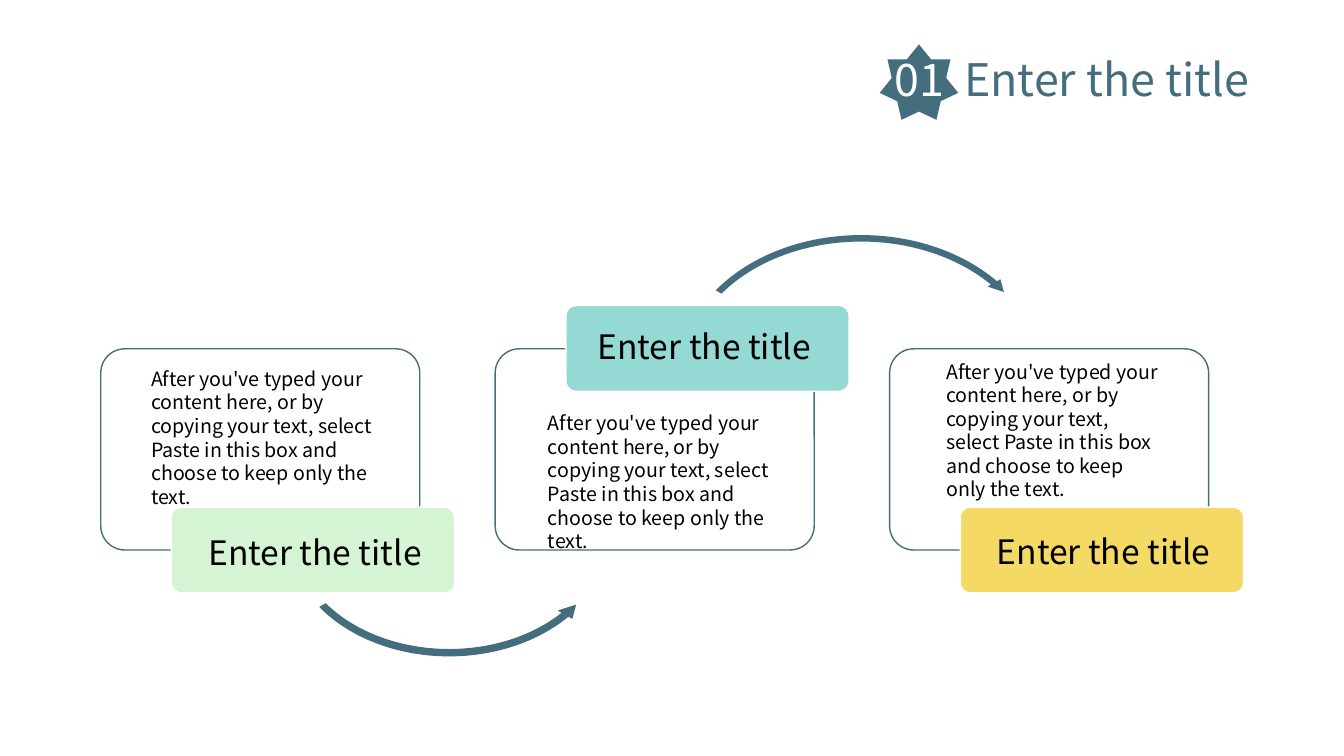
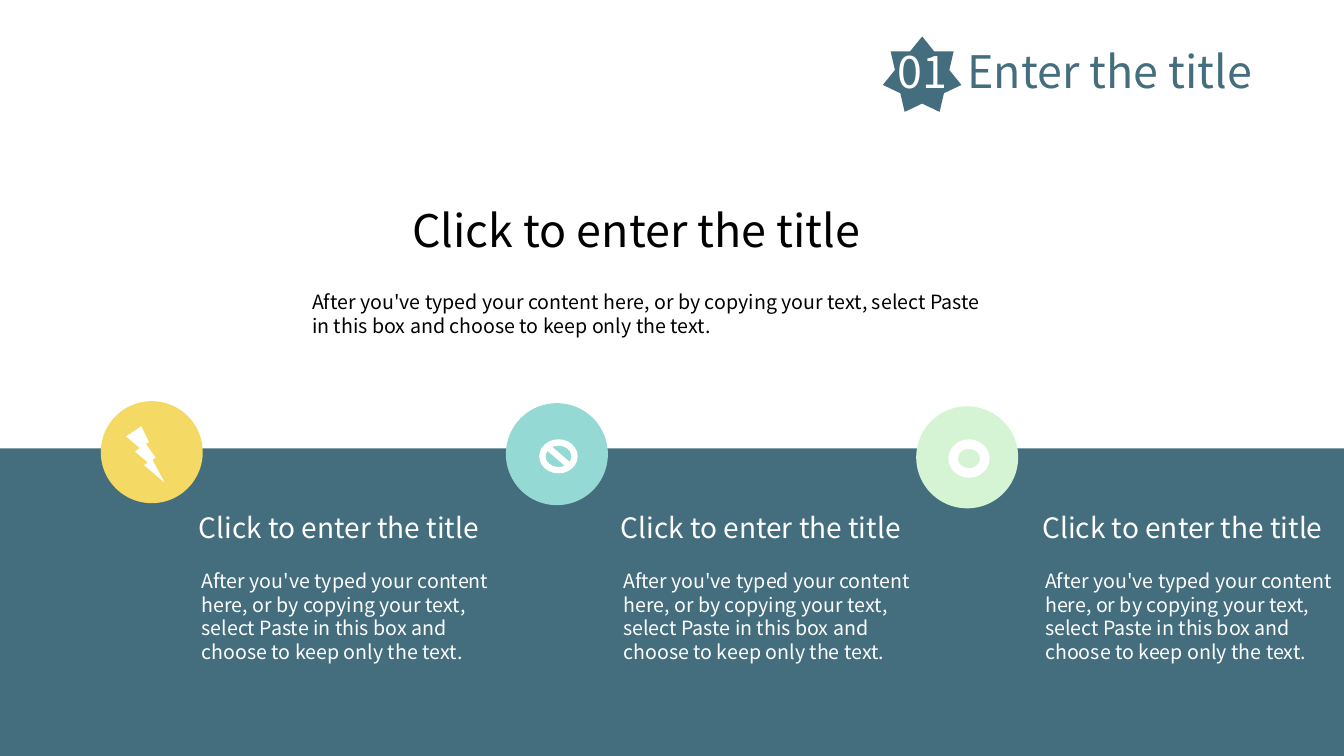
"""Build two slides: three linked cards and three columns on a band."""
from dataclasses import dataclass
from typing import Any, Optional

from lxml import etree
from pptx import Presentation
from pptx import util as u
from pptx.dml import color
from pptx.enum import shapes, text
from pptx.oxml import ns

Preset = shapes.MSO_SHAPE
BODY = ("After you've typed your content here, or by copying your text, "
        "select Paste in this box and choose to keep only the text.")
TITLE = "Enter the title"
CLICK_TITLE = "Click to enter the title"


@dataclass(frozen=True)
class Theme:
    """Colours, font and type sizes."""
    slate: str = "446E7E"
    aqua: str = "94D9D4"
    mint: str = "D5F4D3"
    yellow: str = "F4D964"
    white: str = "FFFFFF"
    black: str = "000000"
    font: str = "Noto Sans CJK SC"
    title: int = 32
    label: int = 24
    heading: int = 20
    body: int = 14


THEME = Theme()


@dataclass(frozen=True)
class Box:
    """Left, top, width and height in centimetres."""
    left: float
    top: float
    width: float
    height: float

    def lengths(self) -> tuple:
        """Return the four lengths."""
        return tuple(u.Cm(n) for n in (self.left, self.top, self.width, self.height))


@dataclass(frozen=True)
class Card:
    """Outlined card with a coloured label."""
    fill: str
    label_top: float
    label_text: Box
    body_text: Box


@dataclass(frozen=True)
class Arc:
    """Curved arrow; thickness and head in percent, angles in degrees."""
    preset: Any
    box: Box
    thickness: float
    head_angle: float
    end_angle: float
    start_angle: float
    head: float
    line: Optional[str] = None


@dataclass(frozen=True)
class Badge:
    """Coloured disc with an icon."""
    fill: str
    left: float
    top: float
    icon: Any
    icon_box: Box


CARDS = (
    Card(THEME.mint, 12.78, Box(5, 13.28, 6.25, 1.27), Box(3.56, 9.12, 6.32, 2.64)),
    Card(THEME.aqua, 7.7, Box(14.81, 8.08, 6.15, 1.27), Box(13.56, 10.24, 6.43, 2.64)),
    Card(THEME.yellow, 12.78, Box(24.87, 13.26, 6.45, 1.27), Box(23.6, 8.94, 6.05, 2.64)),
)
ARCS = (
    Arc(Preset.LEFT_CIRCULAR_ARROW, Box(7.14, 10.26, 8.36, 6.38),
        2.5, 5.16, 34.75, 150.41, 3, THEME.slate),
    Arc(Preset.CIRCULAR_ARROW, Box(17.02, 5.82, 9.37, 7.16),
        2.3, 4.56, 325.85, 209.59, 2.6),
)
BADGES = (
    Badge(THEME.yellow, 2.54, 10.11, Preset.LIGHTNING_BOLT, Box(3.18, 10.74, 0.97, 1.42)),
    Badge(THEME.aqua, 12.75, 10.16, Preset.NO_SYMBOL, Box(13.59, 11.07, 0.97, 0.86)),
    Badge(THEME.mint, 23.09, 10.24, Preset.DONUT, Box(23.9, 11.07, 1.04, 0.97)),
)


def apply(target: Any, formats: dict) -> None:
    """Set each attribute of the target from the format values."""
    for name, value in formats.items():
        setattr(target, name, value)


def add_shape(slide: Any, preset: Any, box: Box, fill: str,
              line: Optional[str] = None, weight: float = 1) -> Any:
    """Add a flat preset shape."""
    shape = slide.shapes.add_shape(preset, *box.lengths())
    shape.shadow.inherit = False
    shape.fill.solid()
    shape.fill.fore_color.rgb = color.RGBColor.from_string(fill)
    if line:
        shape.line.color.rgb = color.RGBColor.from_string(line)
        shape.line.width = u.Pt(weight)
    else:
        shape.line.fill.background()
    return shape


def set_opacity(shape: Any, percent: int) -> None:
    """Make a solid fill partly transparent."""
    colour = shape.fill._xPr.find(ns.qn("a:solidFill"))[0]
    etree.SubElement(colour, ns.qn("a:alpha"), val=str(percent * 1000))


def add_run(paragraph: Any, words: str, size: int, colour: str) -> None:
    """Add one formatted run."""
    run = paragraph.add_run()
    run.text = words
    apply(run.font, {"size": u.Pt(size), "name": THEME.font})
    run.font.color.rgb = color.RGBColor.from_string(colour)


def add_text(slide: Any, box: Box, size: int, *runs: tuple) -> Any:
    """Add a wrapping text box and return its paragraph."""
    frame = slide.shapes.add_textbox(*box.lengths()).text_frame
    apply(frame, {"word_wrap": True, "auto_size": text.MSO_AUTO_SIZE.SHAPE_TO_FIT_TEXT})
    paragraph = frame.paragraphs[0]
    for words, colour in runs:
        add_run(paragraph, words, size, colour)
    return paragraph


def add_header(slide: Any, left: float, top: float) -> None:
    """Add the numbered star and the slide title."""
    add_shape(slide, Preset.STAR_7_POINT, Box(left, top, 1.98, 1.9), THEME.slate)
    paragraph = add_text(slide, Box(left + 0.13, top + 0.05, 10.5, 1.63), THEME.title,
                         ("01\t", THEME.white), (TITLE, THEME.slate))
    tabs = etree.SubElement(paragraph._p.get_or_add_pPr(), ns.qn("a:tabLst"))
    etree.SubElement(tabs, ns.qn("a:tab"), pos=str(u.Cm(1.75)), algn="l")


def add_arc(slide: Any, arc: Arc) -> None:
    """Add a curved arrow."""
    shape = add_shape(slide, arc.preset, arc.box, THEME.slate, arc.line, 0.75)
    angles = (arc.head_angle, arc.end_angle, arc.start_angle)
    values = (arc.thickness / 100, *(angle * 0.6 for angle in angles), arc.head / 100)
    for index, value in enumerate(values):
        shape.adjustments[index] = value


def build_cards(slide: Any) -> None:
    """Draw three cards joined by curved arrows."""
    add_header(slide, 22.17, 1.12)
    for index, card in enumerate(CARDS):
        left = 2.54 + 9.94 * index
        panel = add_shape(slide, Preset.ROUNDED_RECTANGLE, Box(left, 8.79, 8.04, 5.07),
                          THEME.white, THEME.slate)
        set_opacity(panel, 90)
        if index < len(ARCS):
            add_arc(slide, ARCS[index])
        label = add_shape(slide, Preset.ROUNDED_RECTANGLE,
                          Box(left + 1.78, card.label_top, 7.14, 2.16),
                          card.fill, THEME.white)
        for shape in (panel, label):
            shape.adjustments[0] = 0.12
    for card in CARDS:
        add_text(slide, card.body_text, THEME.body, (BODY, THEME.black))
        add_text(slide, card.label_text, THEME.label, (TITLE, THEME.black))


def build_columns(slide: Any) -> None:
    """Draw a heading above a band with three columns."""
    add_header(slide, 22.25, 0.92)
    add_shape(slide, Preset.RECTANGLE, Box(0, 11.3, 33.87, 7.75), THEME.slate)
    for index, badge in enumerate(BADGES):
        left = 4.83 + 10.63 * index
        add_shape(slide, Preset.OVAL, Box(badge.left, badge.top, 2.57, 2.57), badge.fill)
        add_shape(slide, badge.icon, badge.icon_box, THEME.white)
        add_text(slide, Box(left - 0.07, 12.73, 7.8, 1.12), THEME.heading,
                 (CLICK_TITLE, THEME.white))
        add_text(slide, Box(left, 14.22, 7.78, 3.25), THEME.body, (BODY, THEME.white))
    add_text(slide, Box(7.62, 7.19, 17.6, 1.45), THEME.body, (BODY, THEME.black))
    heading = add_text(slide, Box(8.99, 4.98, 14.1, 1.63), THEME.title,
                       (CLICK_TITLE, THEME.black))
    heading.alignment = text.PP_ALIGN.CENTER


def main() -> None:
    """Build and save the presentation."""
    presentation = Presentation()
    apply(presentation, {"slide_width": u.Cm(33.87), "slide_height": u.Cm(19.05)})
    for build in (build_cards, build_columns):
        build(presentation.slides.add_slide(presentation.slide_layouts[6]))
    presentation.save("out.pptx")


if __name__ == "__main__":
    main()
